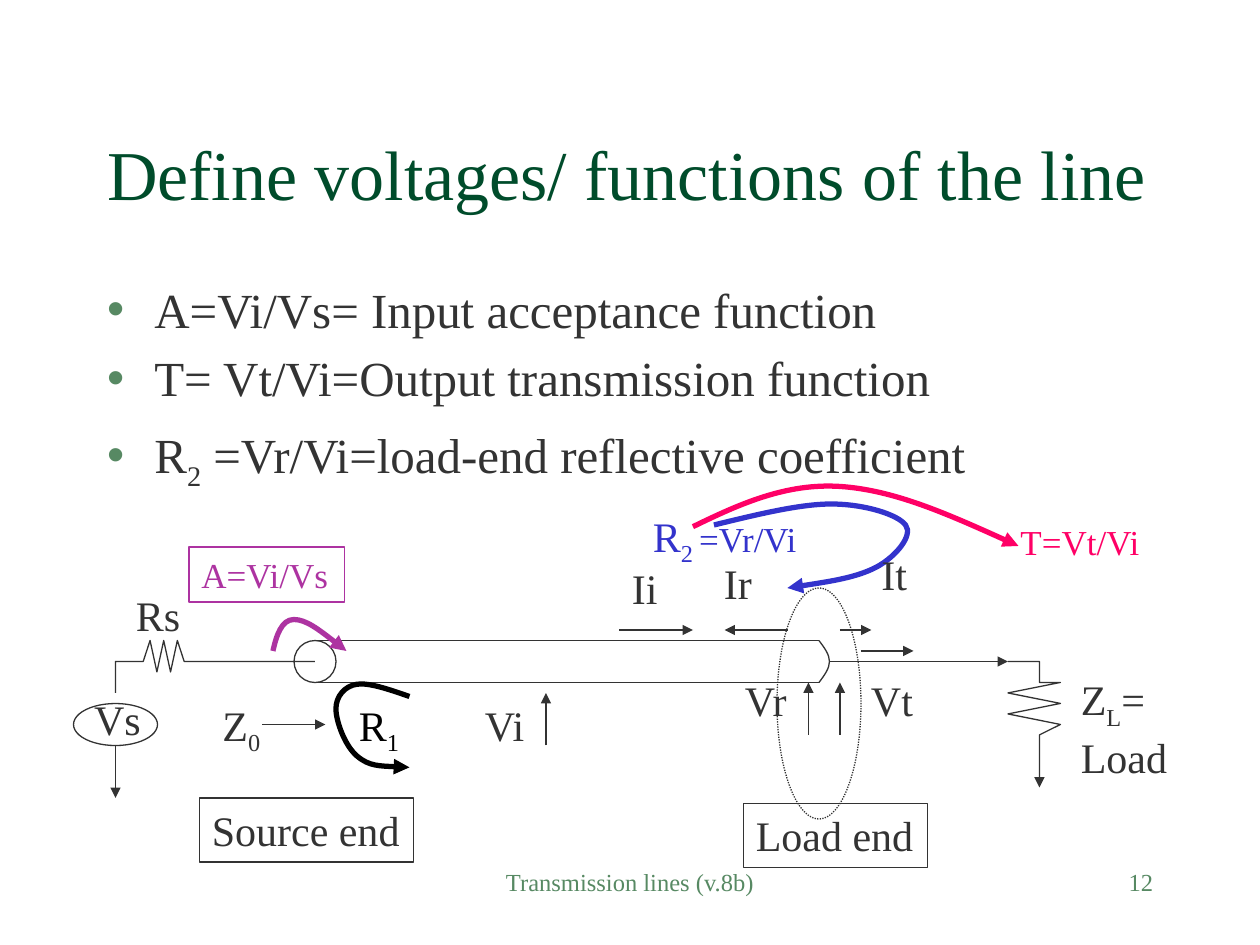
from dataclasses import dataclass

from lxml import etree
from pptx import Presentation
from pptx.dml.color import RGBColor
from pptx.enum import dml, shapes as sh, text as tx
from pptx.oxml.ns import qn
from pptx.util import Pt

FONT = "Times New Roman"
DARK, GREEN, SAGE = "333333", "004C2B", "578963"
PINK, BLUE, PLUM, BLACK = "FF0066", "3333CC", "AD33A1", "000000"


@dataclass
class Label:
    text: str
    x: float
    y: float
    w: float
    h: float = 36
    color: str = DARK
    size: float = 24
    wrap: bool = False
    frame: bool = False
    align: str = "LEFT"


@dataclass
class Wire:
    x1: float
    y1: float
    x2: float
    y2: float
    arrow: bool = True


@dataclass
class Trace:
    points: list
    color: str = DARK
    width: float = 0.75
    curve: bool = False
    arrow: bool = True


def rgb(code: str) -> RGBColor:
    return RGBColor.from_string(code)


def write(para, text: str, *, size: float = 24, color: str = DARK) -> None:
    """Append text to a paragraph; parts between ~ marks are subscripts."""
    for i, part in enumerate(text.split("~")):
        if not part:
            continue
        run = para.add_run()
        run.text = part
        run.font.name, run.font.size = FONT, Pt(size)
        run.font.color.rgb = rgb(color)
        if i % 2:
            run.font._element.set("baseline", "-25000")


def place(shape, x: float, y: float, w: float, h: float) -> None:
    shape.left, shape.top, shape.width, shape.height = map(Pt, (x, y, w, h))


def stroke(shape, color: str = DARK, width: float = 0.75, arrow: bool = False) -> None:
    shape.line.color.rgb = rgb(color)
    shape.line.width = Pt(width)
    if arrow:
        ln = shape.line._get_or_add_ln()
        etree.SubElement(ln, qn("a:tailEnd"), type="triangle")


def draw_label(slide, item: Label):
    area = map(Pt, (item.x, item.y, item.w, item.h))
    if item.frame:
        box = slide.shapes.add_shape(sh.MSO_SHAPE.RECTANGLE, *area)
        box.shadow.inherit = False
        box.fill.background()
        stroke(box, item.color)
    else:
        box = slide.shapes.add_textbox(*area)
    frame = box.text_frame
    frame.word_wrap = item.wrap
    if not item.wrap:
        frame.auto_size = tx.MSO_AUTO_SIZE.SHAPE_TO_FIT_TEXT
    frame.vertical_anchor = tx.MSO_ANCHOR.TOP
    for i, line in enumerate(item.text.split("\n")):
        para = frame.add_paragraph() if i else frame.paragraphs[0]
        para.alignment = tx.PP_ALIGN[item.align]
        write(para, line, size=item.size, color=item.color)
    return box


def draw_wire(slide, item: Wire) -> None:
    ends = map(Pt, (item.x1, item.y1, item.x2, item.y2))
    line = slide.shapes.add_connector(sh.MSO_CONNECTOR.STRAIGHT, *ends)
    stroke(line, arrow=item.arrow)
    etree.SubElement(line._element.spPr, qn("a:effectLst"))


def draw_trace(slide, item: Trace) -> None:
    """Draw a polyline, or cubic curves when points come in threes."""
    first, *rest = [(Pt(x), Pt(y)) for x, y in item.points]
    maker = slide.shapes.build_freeform(*first, scale=1.0)
    maker.add_line_segments(rest, close=False)
    shape = maker.convert_to_shape()
    shape.shadow.inherit = False
    shape.fill.background()
    stroke(shape, item.color, item.width, item.arrow)
    if item.curve:
        legs = list(shape._element.iter(qn("a:lnTo")))
        for i in range(0, len(legs), 3):
            cubic = etree.Element(qn("a:cubicBezTo"))
            legs[i].addprevious(cubic)
            for leg in legs[i:i + 3]:
                cubic.append(leg[0])
                leg.getparent().remove(leg)


def draw_oval(slide, x: float, y: float, w: float, h: float, dots: bool = False) -> None:
    oval = slide.shapes.add_shape(sh.MSO_SHAPE.OVAL, *map(Pt, (x, y, w, h)))
    oval.shadow.inherit = False
    oval.fill.background()
    stroke(oval)
    if dots:
        oval.line.dash_style = dml.MSO_LINE.ROUND_DOT


def fill_text(slide) -> None:
    # Title
    title = slide.shapes.title
    place(title, 54, 36, 612, 90)
    frame = title.text_frame
    frame.auto_size = tx.MSO_AUTO_SIZE.NONE
    frame.vertical_anchor = tx.MSO_ANCHOR.BOTTOM
    frame.paragraphs[0].alignment = tx.PP_ALIGN.LEFT
    write(frame.paragraphs[0], "Define voltages/ functions of the line", size=40, color=GREEN)

    # Bulleted list
    body = slide.placeholders[1]
    place(body, 54, 156, 612, 324)
    frame = body.text_frame
    frame.auto_size = tx.MSO_AUTO_SIZE.NONE
    lines = ["A=Vi/Vs= Input acceptance function",
             "T= Vt/Vi=Output transmission function",
             "R~2~ =Vr/Vi=load-end reflective coefficient"]
    for i, line in enumerate(lines):
        para = frame.add_paragraph() if i else frame.paragraphs[0]
        props = para._p.get_or_add_pPr()
        props.set("marL", str(Pt(27)))
        props.set("indent", str(Pt(-27)))
        tint = etree.SubElement(props, qn("a:buClr"))
        etree.SubElement(tint, qn("a:srgbClr"), val=SAGE)
        etree.SubElement(props, qn("a:buChar"), char="•")
        write(para, line, size=28)
    write(para, " ", size=32)


# Resistor zigzags: source lies flat, load stands upright
SOURCE = [(81.9 + 3.9 * i, y) for i, y in enumerate((378, 366, 384, 366, 384, 366, 378))]
LOAD = [(x, 390 + 6 * i) for i, x in enumerate((606, 576, 606, 576, 606, 594))]

TRACES = [
    Trace([(66, 396), (66, 378), *SOURCE, (180, 378)], arrow=False),
    Trace([(576, 378), (594, 378), (594, 390), *LOAD, (594, 450)]),
    Trace([(468, 366), (471, 370), (474, 374), (474, 378),
           (474, 382), (471, 386), (468, 390)], curve=True, arrow=False),
    Trace([(396, 301), (422.6, 288), (449.3, 276), (480, 278),
           (511, 280), (546.5, 296), (582, 312)], PINK, 3, True),
    Trace([(408, 300), (432.7, 294), (457, 288), (475, 288),
           (494, 288), (513, 294), (517.5, 300), (522, 306), (512, 318), (501, 324),
           (489.6, 330), (470, 333), (450, 336)], BLUE, 3, True),
    Trace([(156, 372), (158, 363), (161, 354), (168, 354),
           (175, 354), (186.5, 363), (198, 372)], PLUM, 3, True),
    Trace([(234, 398), (222.5, 394), (211, 390), (204, 391),
           (197, 392), (192, 398), (192, 405), (192, 412), (197, 426), (204, 432),
           (211, 438), (222.5, 438), (234, 438.5)], BLACK, 3, True),
]

WIRES = [
    Wire(180, 366, 468, 366, False), Wire(180, 390, 468, 390, False),  # line walls
    Wire(474, 378, 576, 378), Wire(66, 426, 66, 456),
    Wire(354, 360, 396, 360), Wire(450, 360, 414, 360),  # currents
    Wire(480, 360, 498, 360), Wire(492, 372, 522, 372),
    Wire(462, 420, 462, 390), Wire(480, 420, 480, 390),  # voltages
    Wire(312, 426, 312, 396), Wire(150, 414, 186, 414),
]

LABELS = [
    Label("Ii", 354, 318, 29.5), Label("Ir", 406.6, 315, 31), Label("It", 496.6, 310, 29.5),
    Label("Vr", 418.6, 382, 40.5), Label("Vt", 490.6, 382, 39.5), Label("Vi", 270, 396, 39),
    Label("Vs", 46.7, 393, 42), Label("Rs", 70.5, 333.5, 40.5), Label("Z~0~", 120, 396, 38),
    Label("Z~L~=\nLoad", 610.5, 381.5, 64.5, 65.5),
    Label("R~1~", 198, 396, 84, color=BLACK, wrap=True),
    Label("T=Vt/Vi", 576, 294, 120, 31, PINK, 20, True),
    Label("A=Vi/Vs", 108, 312.5, 89, 31.5, PLUM, 20, frame=True),
    Label("Source end", 114, 456, 122.4, 36.6, frame=True),
    Label("Load end", 424.8, 459, 105.2, 36.6, frame=True),
    Label("Transmission lines (v.8b)", 246, 492, 228, color=SAGE, size=14, wrap=True,
          align="CENTER"),
    Label("12", 516, 492, 150, color=SAGE, size=14, wrap=True, align="RIGHT"),
]


def main() -> None:
    deck = Presentation()
    deck.slide_width, deck.slide_height = Pt(720), Pt(540)
    slide = deck.slides.add_slide(deck.slide_layouts[1])
    fill_text(slide)

    # Circuit
    for wire in WIRES:
        draw_wire(slide, wire)
    draw_oval(slide, 42, 402, 48, 24)
    draw_oval(slide, 168, 366, 24, 24)
    draw_oval(slide, 444, 336, 48, 132, dots=True)
    for trace in TRACES:
        draw_trace(slide, trace)

    # Labels
    for label in LABELS:
        draw_label(slide, label)
    ratio = draw_label(slide, Label("R~2 ~", 366, 288, 138, color=BLUE, wrap=True))
    write(ratio.text_frame.paragraphs[0], "=Vr/Vi", size=20, color=BLUE)

    deck.save("out.pptx")


if __name__ == "__main__":
    main()
